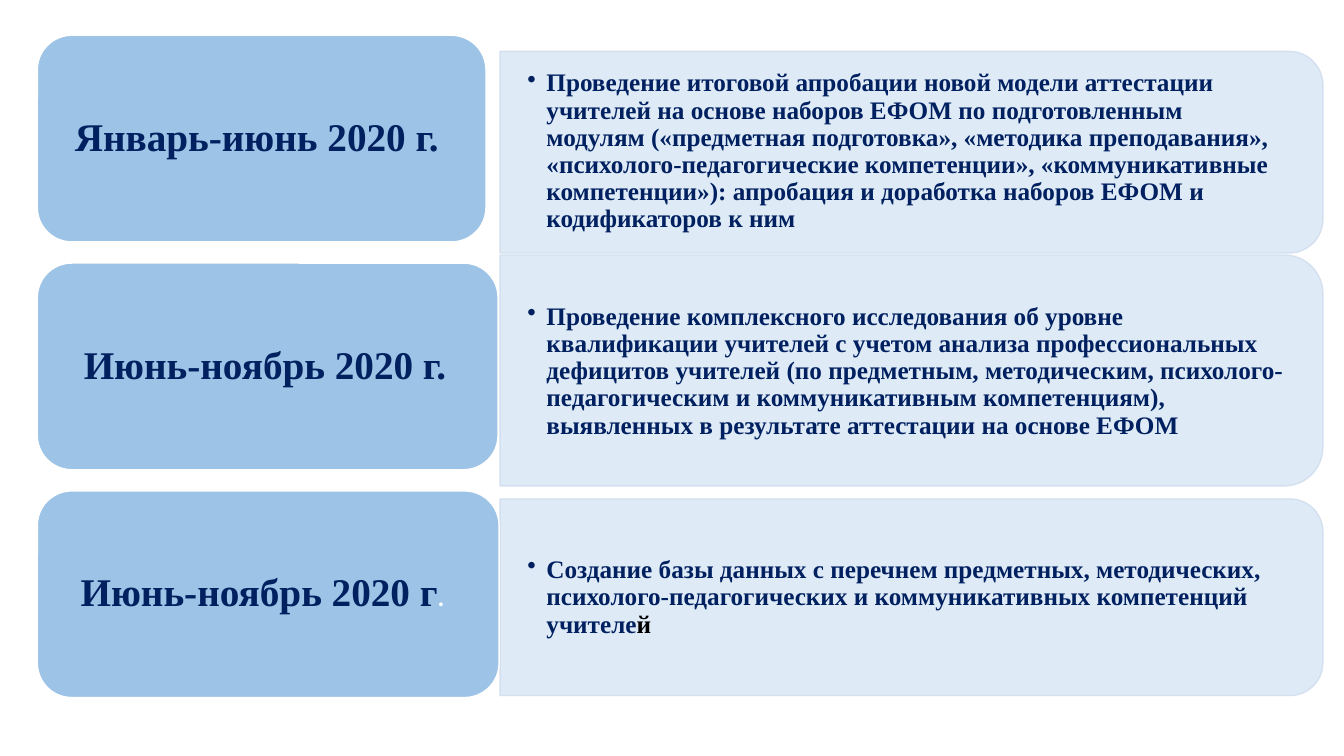
from dataclasses import dataclass

from lxml.etree import SubElement
from pptx import Presentation
from pptx.dml.color import RGBColor
from pptx.enum.shapes import MSO_SHAPE as SHAPE
from pptx.enum.text import MSO_ANCHOR as ANCHOR, PP_ALIGN as ALIGN
from pptx.oxml.ns import qn
from pptx.util import Inches, Pt

COLORS = {
    "label": "9DC3E6",
    "panel": "DEEBF7",
    "edge": "D2DEEF",
    "navy": "002060",
    "white": "FFFFFF",
    "black": "000000",
}
SERIF = "Times New Roman"
SANS = "Calibri"
LABEL_LEFT, LABEL_TOP, LABEL_H, LABEL_STEP = 0.37, 0.35, 2.05, 2.26
LABEL_PAD = 0.1
PANEL_LEFT, PANEL_W = 4.96, 8.16


@dataclass(frozen=True)
class Run:
    text: str
    size: float
    color: str = "navy"
    font: str = SERIF
    bold: bool = True


@dataclass(frozen=True)
class Stage:
    label_w: float
    label: list[Run]
    panel_top: float
    panel_h: float
    text_top: float
    text_h: float
    task: list[Run]


STAGES = [
    Stage(4.45, [Run("Январь-июнь 2020 г. ", 28)], 0.51, 2, 0.6, 1.81, [
        Run("Проведение итоговой апробации новой модели аттестации учителей "
            "на основе наборов ЕФОМ по подготовленным модулям («предметная "
            "подготовка», «методика преподавания», «психолого-педагогические "
            "компетенции», «коммуникативные компетенции»): апробация и "
            "доработка наборов ЕФОМ и кодификаторов к ним", 18)]),
    Stage(4.57, [Run("Июнь-ноябрь 2020 г.", 28),
                 Run(" ", 17, "white", SANS, False)], 2.53, 2.29, 2.65, 2.07, [
        Run("Проведение комплексного исследования об уровне квалификации "
            "учителей с учетом анализа профессиональных дефицитов учителей "
            "(по предметным, методическим, психолого-педагогическим и "
            "коммуникативным компетенциям), выявленных в результате "
            "аттестации на основе ЕФОМ", 18)]),
    Stage(4.58, [Run("Июнь-ноябрь 2020 г", 28),
                 Run(".  ", 18, "white", SANS)], 4.95, 1.95, 5.05, 1.76, [
        Run("Создание базы данных с перечнем предметных, методических, "
            "психолого-педагогических и коммуникативных компетенций учителе",
            18),
        Run("й", 18, "black")]),
]


def rgb(name: str) -> RGBColor:
    return RGBColor.from_string(COLORS[name])


def add_block(s, kind: SHAPE, left: float, top: float, w: float, h: float,
              fill: str, line: str):
    sp = s.shapes.add_shape(kind, Inches(left), Inches(top), Inches(w), Inches(h))
    sp.shadow.inherit = False
    sp.fill.solid()
    sp.fill.fore_color.rgb = rgb(fill)
    sp.line.color.rgb = rgb(line)
    sp.line.width = Pt(1)
    return sp


def add_text(s, left: float, top: float, w: float, h: float,
             pad_x: float, pad_y: float, runs: list[Run]):
    tf = s.shapes.add_textbox(Inches(left), Inches(top), Inches(w), Inches(h)).text_frame
    tf.word_wrap = True
    tf.vertical_anchor = ANCHOR.MIDDLE
    tf.margin_left = tf.margin_right = Inches(pad_x)
    tf.margin_top = tf.margin_bottom = Inches(pad_y)
    p = tf.paragraphs[0]
    p.line_spacing = 0.9
    for run in runs:
        r = p.add_run()
        r.text = run.text
        r.font.name = run.font
        r.font.size = Pt(run.size)
        r.font.bold = run.bold
        r.font.color.rgb = rgb(run.color)
    return p


def add_bullet(p) -> None:
    p.level = 1
    pPr = p._p.get_or_add_pPr()
    pPr.set("marL", str(Inches(0.19)))
    pPr.set("indent", str(Inches(-0.19)))
    SubElement(pPr, qn("a:buChar")).set("char", "•")


def add_panel(s, stage: Stage) -> None:
    left = PANEL_LEFT + (PANEL_W - stage.panel_h) / 2
    top = stage.panel_top + (stage.panel_h - PANEL_W) / 2
    sp = add_block(s, SHAPE.ROUND_2_SAME_RECTANGLE, left, top,
                   stage.panel_h, PANEL_W, "panel", "edge")
    sp.rotation = 90
    line_color = sp.line._ln.find(qn("a:solidFill"))[0]
    SubElement(line_color, qn("a:alpha")).set("val", "90000")
    add_bullet(add_text(s, PANEL_LEFT, stage.text_top, 8.07, stage.text_h,
                        0.27, 0.14, stage.task))


def add_label(s, stage: Stage, top: float) -> None:
    add_block(s, SHAPE.ROUNDED_RECTANGLE, LABEL_LEFT, top,
              stage.label_w, LABEL_H, "label", "white")
    p = add_text(s, LABEL_LEFT + LABEL_PAD, top + LABEL_PAD,
                 stage.label_w - 2 * LABEL_PAD, LABEL_H - 2 * LABEL_PAD,
                 0.12, 0.06, stage.label)
    p.alignment = ALIGN.CENTER


def main() -> None:
    prs = Presentation()
    prs.slide_width, prs.slide_height = Inches(13.33), Inches(7.5)
    s = prs.slides.add_slide(prs.slide_layouts[6])
    for i, stage in enumerate(STAGES):
        add_panel(s, stage)
        add_label(s, stage, LABEL_TOP + i * LABEL_STEP)
    prs.save("out.pptx")


if __name__ == "__main__":
    main()
